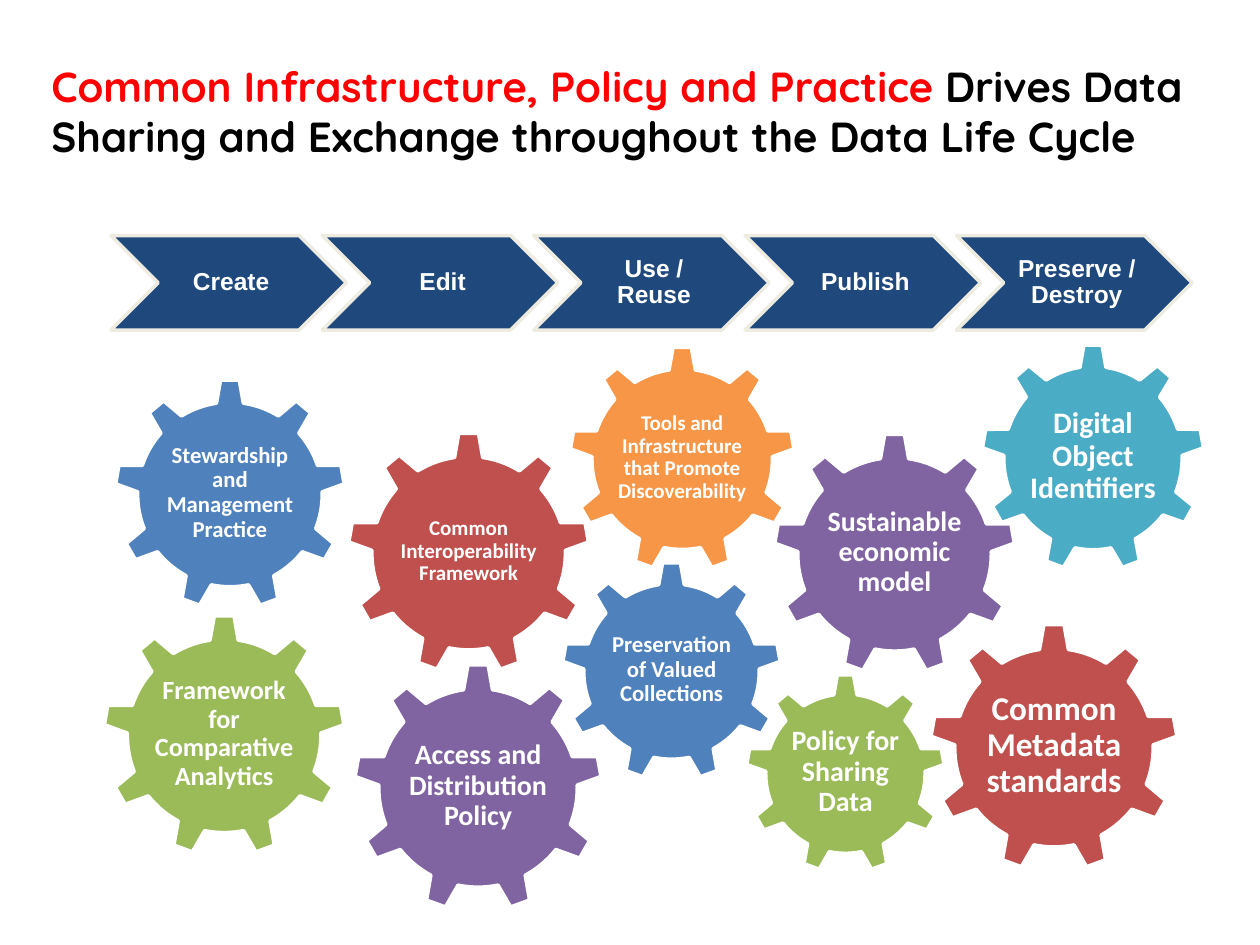
from pptx import Presentation
from pptx.dml.color import RGBColor
from pptx.enum.shapes import MSO_SHAPE
from pptx.enum.text import MSO_ANCHOR, PP_ALIGN
from pptx.util import Pt

GEAR = MSO_SHAPE.GEAR_9
CHEVRON = MSO_SHAPE.CHEVRON
MIDDLE = MSO_ANCHOR.MIDDLE
CENTER = PP_ALIGN.CENTER

COLORS = {
    "blue": "4F81BD",
    "green": "9BBB59",
    "red": "C0504D",
    "teal": "4BACC6",
    "orange": "F79646",
    "purple": "8064A2",
    "navy": "1F497D",
    "cream": "EEECE1",
    "white": "FFFFFF",
    "black": "000000",
    "highlight": "FF0000",
}

TITLE = [
    ("Common Infrastructure, Policy and Practice ", "highlight"),
    ("Drives Data Sharing and Exchange throughout the Data Life Cycle", "black"),
]

STAGES = ["Create", "Edit", "Use / Reuse", "Publish", "Preserve / Destroy"]

DRIVERS = [
    ("Stewardship and Management Practice", "blue", 65.5, 216.7, 131.8, 131.8, 13),
    ("Framework for Comparative Analytics", "green", 59, 351.4, 138.2, 138.2, 15),
    ("Common Metadata standards", "red", 531.4, 356.4, 141.8, 141.8, 19),
    ("Digital Object Identifiers", "teal", 560.9, 196.6, 127.4, 130.3, 17),
    ("Tools and Infrastructure that Promote Discoverability", "orange",
     325.4, 198, 128.9, 128.9, 12),
    ("Preservation of Valued Collections", "blue", 321.1, 321.1, 125.3, 125.3, 13),
    ("Common Interoperability Framework", "red", 198.7, 247, 138.2, 138.2, 12),
    ("Access and Distribution Policy", "purple", 202.3, 379.4, 141.8, 141.8, 16),
    ("Policy for Sharing Data", "green", 426.2, 385.2, 113.8, 113.8, 16),
    ("Sustainable economic model", "purple", 442.1, 247.7, 138.2, 138.2, 16),
]


def rgb(name):
    """Return the named colour."""
    return RGBColor.from_string(COLORS[name])


def add_outline(slide, preset, fill, edge, left, top, width, height):
    """Add a filled preset shape with a thin edge."""
    outline = slide.shapes.add_shape(preset, Pt(left), Pt(top), Pt(width), Pt(height))
    outline.shadow.inherit = False
    outline.fill.solid()
    outline.fill.fore_color.rgb = rgb(fill)
    outline.line.color.rgb = rgb(edge)
    outline.line.width = Pt(2)
    return outline


def add_frame(slide, left, top, width, height):
    """Add a wrapping, vertically centred text box and return its text frame."""
    box = slide.shapes.add_textbox(Pt(left), Pt(top), Pt(width), Pt(height))
    frame = box.text_frame
    frame.word_wrap = True
    frame.vertical_anchor = MIDDLE
    return frame


def add_label(slide, text, font_name, size, left, top, width, height, indent=1.5):
    """Add a centred bold white label."""
    frame = add_frame(slide, left, top, width, height)
    frame.margin_left = Pt(indent)
    frame.margin_right = frame.margin_top = frame.margin_bottom = Pt(1.5)
    paragraph = frame.paragraphs[0]
    paragraph.text = text
    paragraph.alignment = CENTER
    paragraph.line_spacing = 0.9
    font = paragraph.font
    font.name, font.size, font.bold = font_name, Pt(size), True
    font.color.rgb = rgb("white")


def add_title(slide):
    """Add the two-colour title."""
    paragraph = add_frame(slide, 22.3, 12.2, 696.2, 102.2).paragraphs[0]
    font = paragraph.font
    font.name, font.size, font.bold = "Quicksand", Pt(24), True
    for text, color in TITLE:
        run = paragraph.add_run()
        run.text = text
        run.font.color.rgb = rgb(color)


def add_stage(slide, index, text):
    """Add one chevron of the data life cycle."""
    left, top, width, height = 63.4 + 120.8 * index, 134.6, 134.6, 54
    add_outline(slide, CHEVRON, "navy", "cream", left, top, width, height)
    add_label(slide, text, "Arial", 14, left + 0.2 * width, top,
              0.6 * width, height, indent=4.3)


def add_driver(slide, text, color, left, top, width, height, size):
    """Add one gear with its label in the hub."""
    add_outline(slide, GEAR, color, "white", left, top, width, height)
    add_label(slide, text, "Calibri", size, left + 0.2 * width,
              top + 0.235 * height, 0.6 * width, 0.515 * height)


def main():
    """Build the slide and save it."""
    deck = Presentation()
    deck.slide_width, deck.slide_height = Pt(720), Pt(540)
    slide = deck.slides.add_slide(deck.slide_layouts[6])
    add_title(slide)
    for driver in DRIVERS:
        add_driver(slide, *driver)
    for index, stage in enumerate(STAGES):
        add_stage(slide, index, stage)
    deck.save("out.pptx")


if __name__ == "__main__":
    main()
